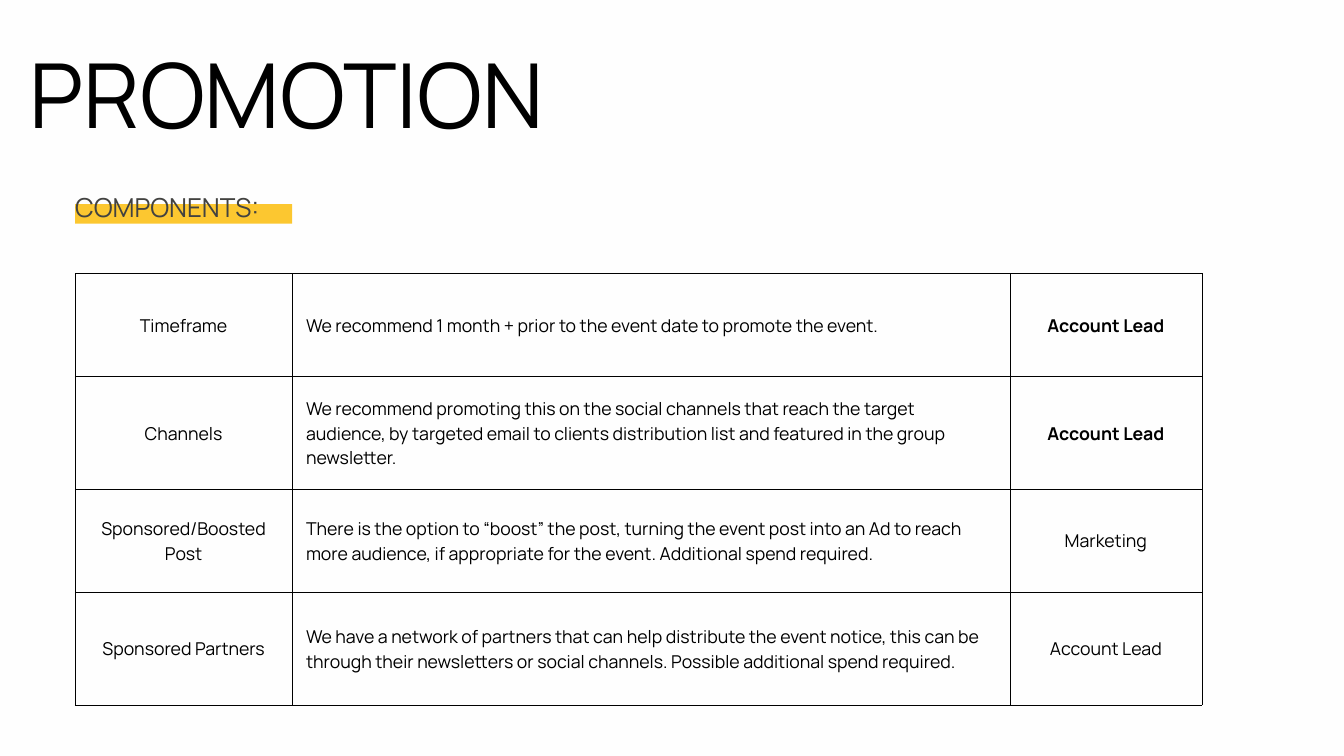
from lxml.etree import SubElement
from pptx import Presentation
from pptx.dml.color import RGBColor
from pptx.enum.shapes import MSO_SHAPE as Shape
from pptx.enum.text import MSO_ANCHOR as Anchor, PP_ALIGN as Align
from pptx.oxml.ns import qn
from pptx.util import Cm, Pt

# Content: topic, advice, owner, owner in bold
ROWS = [
    ("Timeframe",
     "We recommend 1 month + prior to the event date to promote the event.",
     "Account Lead", True),
    ("Channels",
     "We recommend promoting this on the social channels that reach the target "
     "audience, by targeted email to clients distribution list and featured in "
     "the group newsletter.",
     "Account Lead", True),
    ("Sponsored/Boosted Post",
     "There is the option to “boost” the post, turning the event post into an Ad "
     "to reach more audience, if appropriate for the event. Additional spend "
     "required.",
     "Marketing", False),
    ("Sponsored Partners",
     "We have a network of partners that can help distribute the event notice, "
     "this can be through their newsletters or social channels. Possible "
     "additional spend required.",
     "Account Lead", False),
]

# Style and layout in cm
FONT = "Manrope"
BLACK = RGBColor(0x00, 0x00, 0x00)
GREY = RGBColor(0x42, 0x42, 0x40)
YELLOW = RGBColor(0xFC, 0xC7, 0x30)
PAPER = RGBColor(0xFE, 0xFE, 0xFE)
LEFT, TOP = 2.84, 10.34
WIDTHS = [8.2, 27.13, 7.26]
HEIGHTS = [3.89, 4.27, 3.89, 4.27]
ALIGNS = [Align.CENTER, Align.LEFT, Align.CENTER]
INSET = 0.53


def write(frame, text, size, lead, color, align=Align.LEFT, bold=False):
    frame.word_wrap = True
    para = frame.paragraphs[0]
    para.alignment = align
    para.line_spacing = Pt(lead)
    run = para.add_run()
    run.text = text
    font = run.font
    font.name, font.size, font.bold = FONT, Pt(size), bold
    font.color.rgb = color


def add_text(slide, box, *style):
    frame = slide.shapes.add_textbox(*map(Cm, box)).text_frame
    frame.margin_left = frame.margin_right = 0
    frame.margin_top = frame.margin_bottom = 0
    write(frame, *style)


def add_border(cell):
    props = cell._tc.get_or_add_tcPr()
    for index, side in enumerate(("lnL", "lnR", "lnT", "lnB")):
        line = props.makeelement(qn("a:" + side), {"w": str(Pt(0.75))})
        fill = SubElement(line, qn("a:solidFill"))
        SubElement(fill, qn("a:srgbClr"), val=str(BLACK))
        props.insert(index, line)


def add_grid(slide):
    frame = slide.shapes.add_table(
        len(ROWS), len(WIDTHS), Cm(LEFT), Cm(TOP),
        Cm(sum(WIDTHS)), Cm(sum(HEIGHTS)))
    table = frame.table
    table.first_row = table.horz_banding = False
    for col, width in zip(table.columns, WIDTHS):
        col.width = Cm(width)
    for r, (*texts, strong) in enumerate(ROWS):
        table.rows[r].height = Cm(HEIGHTS[r])
        for c, text in enumerate(texts):
            cell = table.cell(r, c)
            cell.fill.background()
            cell.vertical_anchor = Anchor.MIDDLE
            cell.margin_left = cell.margin_right = Cm(INSET)
            cell.margin_top = cell.margin_bottom = Cm(INSET)
            write(cell.text_frame, text, 19, 26.6, BLACK, ALIGNS[c],
                  strong and c == 2)
            add_border(cell)


def main():
    deck = Presentation()
    deck.slide_width, deck.slide_height = Cm(50.8), Cm(28.58)
    slide = deck.slides.add_slide(deck.slide_layouts[6])
    slide.background.fill.solid()
    slide.background.fill.fore_color.rgb = PAPER

    add_grid(slide)

    # Highlight bar behind the subtitle, as wide as the first column
    bar = slide.shapes.add_shape(
        Shape.RECTANGLE, Cm(LEFT), Cm(7.72), Cm(WIDTHS[0]), Cm(0.74))
    bar.shadow.inherit = False
    bar.fill.solid()
    bar.fill.fore_color.rgb = YELLOW
    bar.line.fill.background()

    # Headings
    add_text(slide, (LEFT, 7.2, sum(WIDTHS), 1.24),
             "COMPONENTS:", 28, 35, GREY)
    add_text(slide, (1.12, 1.8, 26.97, 4.04),
             "PROMOTION", 96, 105.6, BLACK)
    deck.save("out.pptx")


if __name__ == "__main__":
    main()
